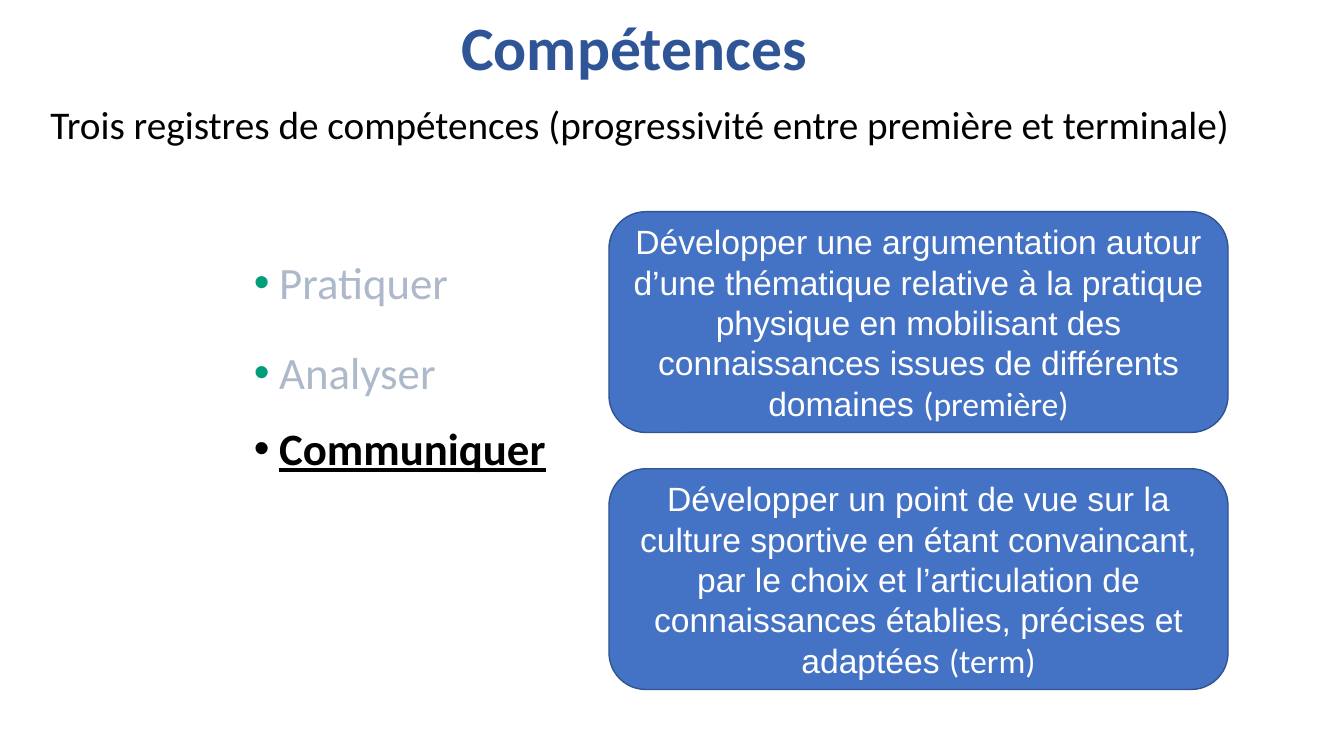
from lxml import etree
from pptx import Presentation
from pptx.dml.color import RGBColor
from pptx.enum.shapes import MSO_SHAPE
from pptx.enum.text import MSO_ANCHOR, PP_ALIGN
from pptx.oxml.ns import qn
from pptx.util import Inches, Pt

CENTER, LEFT, JUSTIFY = PP_ALIGN.CENTER, PP_ALIGN.LEFT, PP_ALIGN.JUSTIFY
TOP, MIDDLE = MSO_ANCHOR.TOP, MSO_ANCHOR.MIDDLE
ROUNDED = MSO_SHAPE.FLOWCHART_ALTERNATE_PROCESS

TITLE_BLUE = RGBColor(0x2F, 0x55, 0x97)
CARD_BLUE = RGBColor(0x44, 0x72, 0xC4)
CARD_EDGE = RGBColor(0x32, 0x54, 0x91)
GREEN = RGBColor(0x00, 0x9F, 0x7A)
FADED = RGBColor(0xAD, 0xB9, 0xCA)
BLACK = RGBColor(0, 0, 0)
WHITE = RGBColor(0xFF, 0xFF, 0xFF)

MARGIN = 0.4
CARD_LEFT, CARD_TOP, CARD_WIDTH, CARD_HEIGHT, CARD_PITCH = 6.04, 2.1, 6.14, 2.19, 2.55
SKILLS = [("Pratiquer", False), ("Analyser", False), ("Communiquer", True)]
CARDS = [
    ("Développer une argumentation autour d’une thématique relative à la pratique "
     "physique en mobilisant des connaissances issues de différents domaines ", "(première)"),
    ("Développer un point de vue sur la culture sportive en étant convaincant, par le choix "
     "et l’articulation de connaissances établies, précises et adaptées ", "(term)"),
]


def add_span(para, text, size, color, font="Calibri", bold=False, underline=False):
    """Add one formatted run to a paragraph."""
    span = para.add_run()
    span.text = text
    span.font.name, span.font.size = font, Pt(size)
    span.font.color.rgb = color
    span.font.bold, span.font.underline = bold, underline


def add_box(page, left, top, width, height, anchor=TOP):
    """Add a wrapping text box and return its text frame."""
    box = page.shapes.add_textbox(Inches(left), Inches(top), Inches(width), Inches(height))
    frame = box.text_frame
    frame.word_wrap = True
    frame.vertical_anchor = anchor
    return frame


def add_bullet(para, color):
    """Give a paragraph a hanging round bullet."""
    props = para._p.get_or_add_pPr()
    props.set("marL", str(Inches(0.25)))
    props.set("indent", str(-Inches(0.25)))
    tint = etree.SubElement(props, qn("a:buClr"))
    etree.SubElement(tint, qn("a:srgbClr"), val=str(color))
    etree.SubElement(props, qn("a:buFont"), typeface="Arial")
    etree.SubElement(props, qn("a:buChar"), char="•")


def add_skill(para, name, current):
    """Write one skill, highlighted when it is the current one."""
    para.alignment = LEFT if current else JUSTIFY
    para.line_spacing = 0.9 if current else 1.15
    para.space_before = Pt(10)
    para.space_after = Pt(0 if current else 10)
    add_bullet(para, BLACK if current else GREEN)
    add_span(para, name, 32, BLACK if current else FADED, bold=current, underline=current)


def add_card(page, row, text, level):
    """Add a rounded card describing the skill at one school level."""
    card = page.shapes.add_shape(ROUNDED, Inches(CARD_LEFT), Inches(CARD_TOP + row * CARD_PITCH),
                                 Inches(CARD_WIDTH), Inches(CARD_HEIGHT))
    card.shadow.inherit = False
    card.fill.solid()
    card.fill.fore_color.rgb = CARD_BLUE
    card.line.color.rgb = CARD_EDGE
    card.line.width = Pt(1)
    frame = card.text_frame
    frame.word_wrap = True
    frame.vertical_anchor = MIDDLE
    para = frame.paragraphs[0]
    para.alignment = CENTER
    add_span(para, text, 24, WHITE, font="Arial")
    add_span(para, level, 24, WHITE)


def main():
    """Build the skills slide and save it."""
    deck = Presentation()
    deck.slide_width, deck.slide_height = Inches(13.33), Inches(7.5)
    page = deck.slides.add_slide(deck.slide_layouts[6])

    title = add_box(page, MARGIN, 0, 11.78, 1.01, MIDDLE).paragraphs[0]
    title.alignment = CENTER
    title.line_spacing = 0.9
    add_span(title, "Compétences", 44, TITLE_BLUE, bold=True)

    skills = add_box(page, 2.42, 2.4, 4.45, 5)
    for index, (name, current) in enumerate(SKILLS):
        para = skills.add_paragraph() if index else skills.paragraphs[0]
        add_skill(para, name, current)

    subtitle = add_box(page, MARGIN, 0.95, 12.45, 0.98).paragraphs[0]
    add_span(subtitle, "Trois registres de compétences (progressivité entre première et terminale)",
             28, BLACK)

    for row, (text, level) in enumerate(CARDS):
        add_card(page, row, text, level)
    deck.save("out.pptx")


if __name__ == "__main__":
    main()
